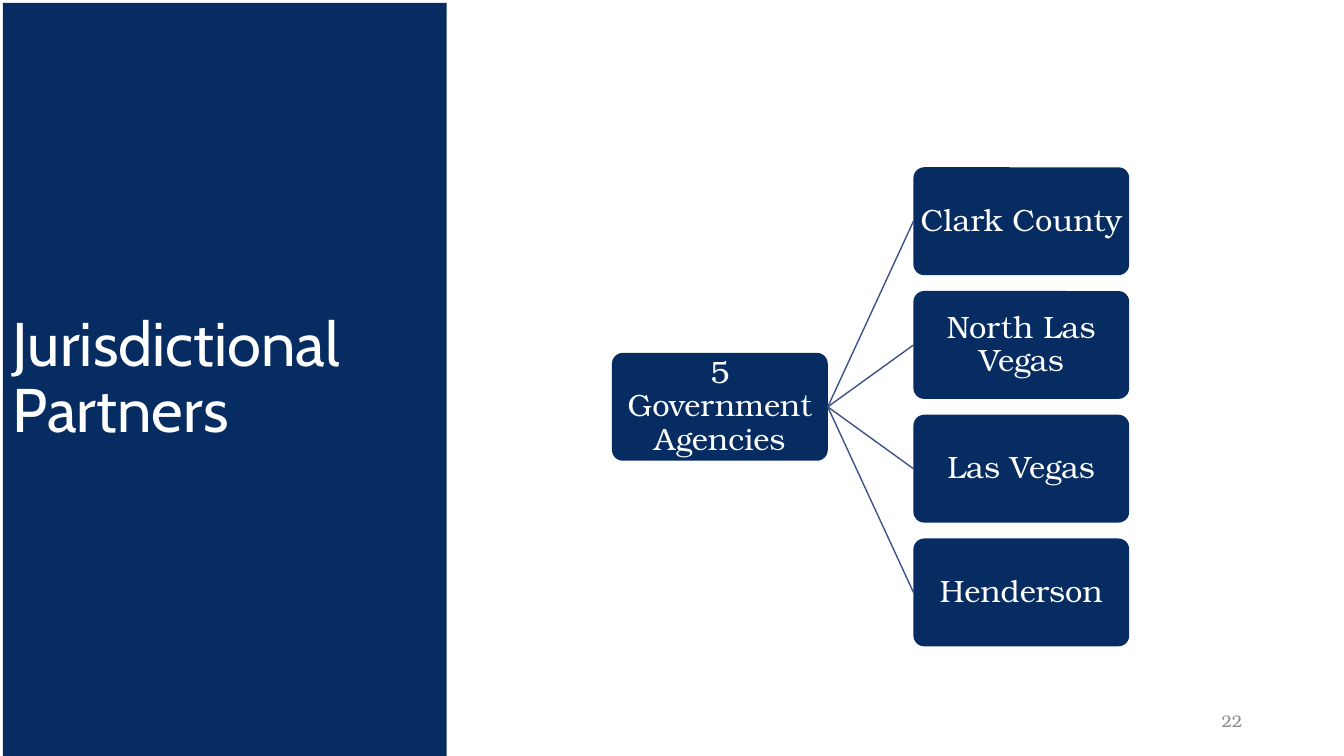
"""Build the Jurisdictional Partners slide with its agency hierarchy."""
from lxml.etree import SubElement
from pptx import Presentation
from pptx.dml.color import RGBColor
from pptx.enum.shapes import MSO_CONNECTOR, MSO_SHAPE
from pptx.enum.text import MSO_ANCHOR, PP_ALIGN
from pptx.oxml.ns import qn
from pptx.util import Inches, Pt

TITLE = "Jurisdictional Partners"
ROOT = "5 Government Agencies"
AGENCIES = ["Clark County", "North Las Vegas", "Las Vegas", "Henderson"]
PAGE_NUMBER = "22"

NAVY = RGBColor(0x07, 0x2C, 0x62)
LINE_BLUE = RGBColor(0x3B, 0x52, 0x8A)
WHITE = RGBColor(0xFF, 0xFF, 0xFF)
GRAY = RGBColor(0x8C, 0x8C, 0x8C)
TITLE_FONT, BODY_FONT = "Cabin", "TeX Gyre Bonum"

BOX_WIDTH, BOX_HEIGHT, BOX_INSET = 2.14, 1.07, 0.02
ROOT_LEFT, AGENCY_LEFT = 6.07, 9.06
AGENCY_TOP, AGENCY_PITCH = 1.66, 1.2275


def write_text(shape, text, font_name, size, color, align, spacing=None):
    frame = shape.text_frame
    frame.text = text
    frame.word_wrap = True
    frame.vertical_anchor = MSO_ANCHOR.MIDDLE
    paragraph = frame.paragraphs[0]
    paragraph.alignment = align
    paragraph.line_spacing = spacing
    font = paragraph.runs[0].font
    font.name, font.size, font.color.rgb = font_name, Pt(size), color


def add_panel(slide, kind, left, top, width, height):
    shape = slide.shapes.add_shape(
        kind, Inches(left), Inches(top), Inches(width), Inches(height))
    shape.shadow.inherit = False
    shape.fill.solid()
    shape.fill.fore_color.rgb = NAVY
    shape.line.fill.background()
    return shape


def add_box(slide, text, left, top):
    box = add_panel(slide, MSO_SHAPE.ROUNDED_RECTANGLE, left, top, BOX_WIDTH, BOX_HEIGHT)
    box.adjustments[0] = 0.1
    frame = box.text_frame
    frame.margin_left = frame.margin_right = Inches(BOX_INSET)
    frame.margin_top = frame.margin_bottom = Inches(BOX_INSET)
    write_text(box, text, BODY_FONT, 22, WHITE, PP_ALIGN.CENTER, 0.9)
    return box


def join_boxes(slide, start, end):
    connector = slide.shapes.add_connector(MSO_CONNECTOR.STRAIGHT, 0, 0, 0, 0)
    connector.begin_connect(start, 3)
    connector.end_connect(end, 1)
    connector.line.color.rgb = LINE_BLUE
    connector.line.width = Pt(1)
    SubElement(connector.element.spPr, qn("a:effectLst"))


def main():
    presentation = Presentation()
    presentation.slide_width, presentation.slide_height = Inches(13.33), Inches(7.5)
    slide = presentation.slides.add_slide(presentation.slide_layouts[6])

    title = add_panel(slide, MSO_SHAPE.RECTANGLE, 0.03, 0.03, 4.4, 7.47)
    write_text(title, TITLE, TITLE_FONT, 44, WHITE, PP_ALIGN.LEFT, 0.9)

    root_top = AGENCY_TOP + AGENCY_PITCH * (len(AGENCIES) - 1) / 2
    root = add_box(slide, ROOT, ROOT_LEFT, root_top)
    for row, agency in enumerate(AGENCIES):
        box = add_box(slide, agency, AGENCY_LEFT, AGENCY_TOP + row * AGENCY_PITCH)
        join_boxes(slide, root, box)

    number = slide.shapes.add_textbox(Inches(9.42), Inches(6.95), Inches(3), Inches(0.4))
    write_text(number, PAGE_NUMBER, BODY_FONT, 12, GRAY, PP_ALIGN.RIGHT)

    presentation.save("out.pptx")


if __name__ == "__main__":
    main()
